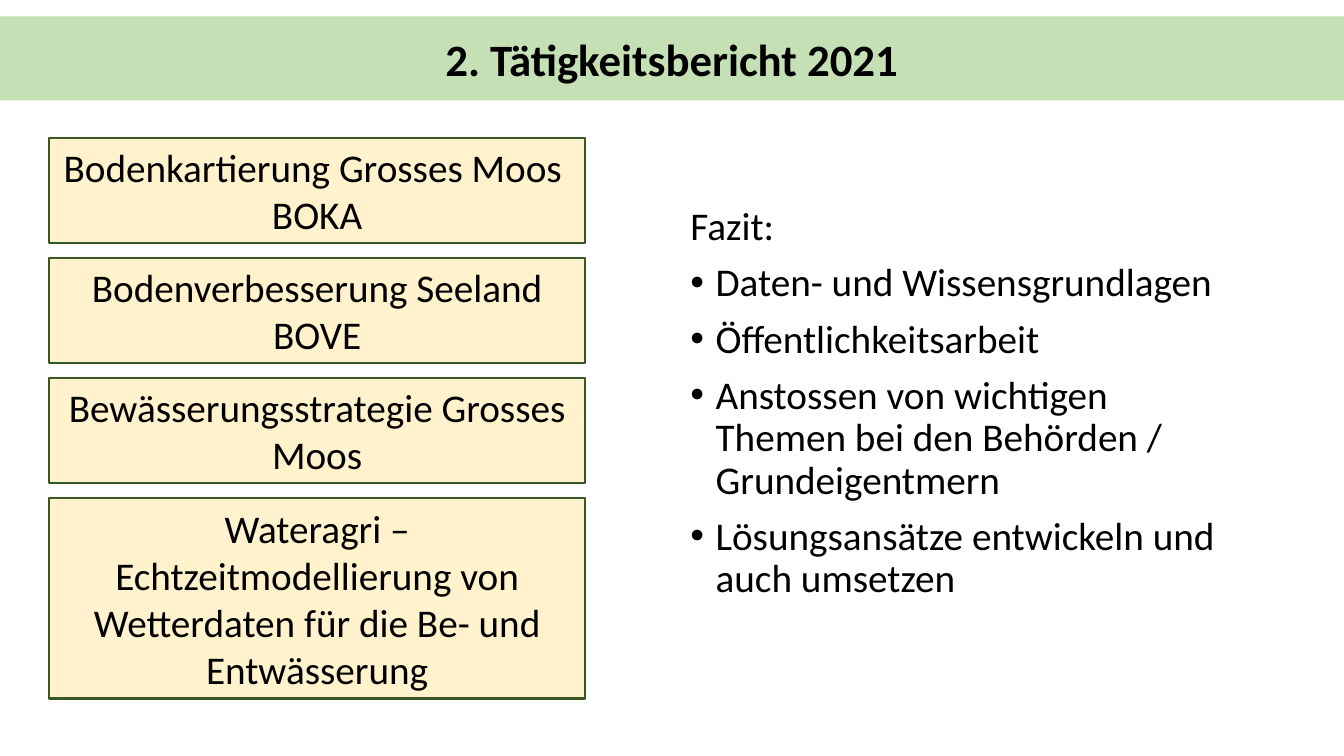
import pptx
import pptx.dml.color
import pptx.enum.shapes
import pptx.enum.text
import pptx.oxml.ns
import pptx.util
from lxml import etree

Inches = pptx.util.Inches
Pt = pptx.util.Pt
ALIGN = pptx.enum.text.PP_ALIGN
ANCHOR = pptx.enum.text.MSO_ANCHOR
FIT = pptx.enum.text.MSO_AUTO_SIZE

COLORS = {"band": "C5E0B4", "card": "FFF2CC", "edge": "385723", "text": "000000"}
TOPICS = [
    ("Bodenkartierung Grosses Moos \vBOKA", 1.04),
    ("Bodenverbesserung Seeland\vBOVE", 1.04),
    ("Bewässerungsstrategie Grosses Moos", 1.04),
    ("Wateragri – Echtzeitmodellierung von Wetterdaten für die Be- und Entwässerung", 1.99),
]
POINTS = [
    "Daten- und Wissensgrundlagen",
    "Öffentlichkeitsarbeit",
    "Anstossen von wichtigen Themen bei den Behörden / Grundeigentmern",
    "Lösungsansätze entwickeln und auch umsetzen",
]


def color(name):
    return pptx.dml.color.RGBColor.from_string(COLORS[name])


def paint(shape, name):
    shape.fill.solid()
    shape.fill.fore_color.rgb = color(name)


def style(para, size, bold=False):
    for run in para.runs:
        run.font.name = "Calibri"
        run.font.size = Pt(size)
        run.font.bold = bold
        run.font.color.rgb = color("text")


def center(shape, text, size, bold=False):
    frame = shape.text_frame
    frame.text = text
    frame.word_wrap = True
    frame.auto_size = FIT.SHAPE_TO_FIT_TEXT
    frame.vertical_anchor = ANCHOR.MIDDLE
    para = frame.paragraphs[0]
    para.alignment = ALIGN.CENTER
    style(para, size, bold)


def add_title(slide, left, top, width, height):
    title = slide.shapes.title
    title.left, title.top = Inches(left), Inches(top)
    title.width, title.height = Inches(width), Inches(height)
    paint(title, "band")
    center(title, "2. Tätigkeitsbericht 2021", 32, True)


def add_cards(slide, left, top, width, gap):
    for text, height in TOPICS:
        card = slide.shapes.add_shape(
            pptx.enum.shapes.MSO_SHAPE.RECTANGLE,
            Inches(left), Inches(top), Inches(width), Inches(height))
        card.shadow.inherit = False
        paint(card, "card")
        card.line.color.rgb = color("edge")
        card.line.width = Pt(1.5)
        center(card, text, 28)
        top += height + gap


def add_bullet(para):
    props = para._p.get_or_add_pPr()
    props.set("marL", str(Inches(0.25)))
    props.set("indent", str(-Inches(0.25)))
    font = etree.SubElement(props, pptx.oxml.ns.qn("a:buFont"))
    font.set("typeface", "Arial")
    mark = etree.SubElement(props, pptx.oxml.ns.qn("a:buChar"))
    mark.set("char", "•")


def add_points(slide, left, top, width, height):
    box = slide.shapes.add_textbox(
        Inches(left), Inches(top), Inches(width), Inches(height))
    frame = box.text_frame
    frame.word_wrap = True
    frame.auto_size = FIT.NONE
    frame.text = "\n".join(["Fazit:"] + POINTS)
    for index, para in enumerate(frame.paragraphs):
        if index:
            add_bullet(para)
            para.space_before = Pt(10)
        para.line_spacing = 0.9
        style(para, 28)


def main():
    deck = pptx.Presentation()
    deck.slide_width, deck.slide_height = Inches(13.33), Inches(7.5)
    slide = deck.slides.add_slide(deck.slide_layouts[5])
    add_title(slide, 0, 0.26, 13.33, 0.64)
    add_cards(slide, 0.49, 1.37, 5.31, 0.15)
    add_points(slide, 6.75, 2, 5.67, 4.76)
    deck.save("out.pptx")


if __name__ == "__main__":
    main()
